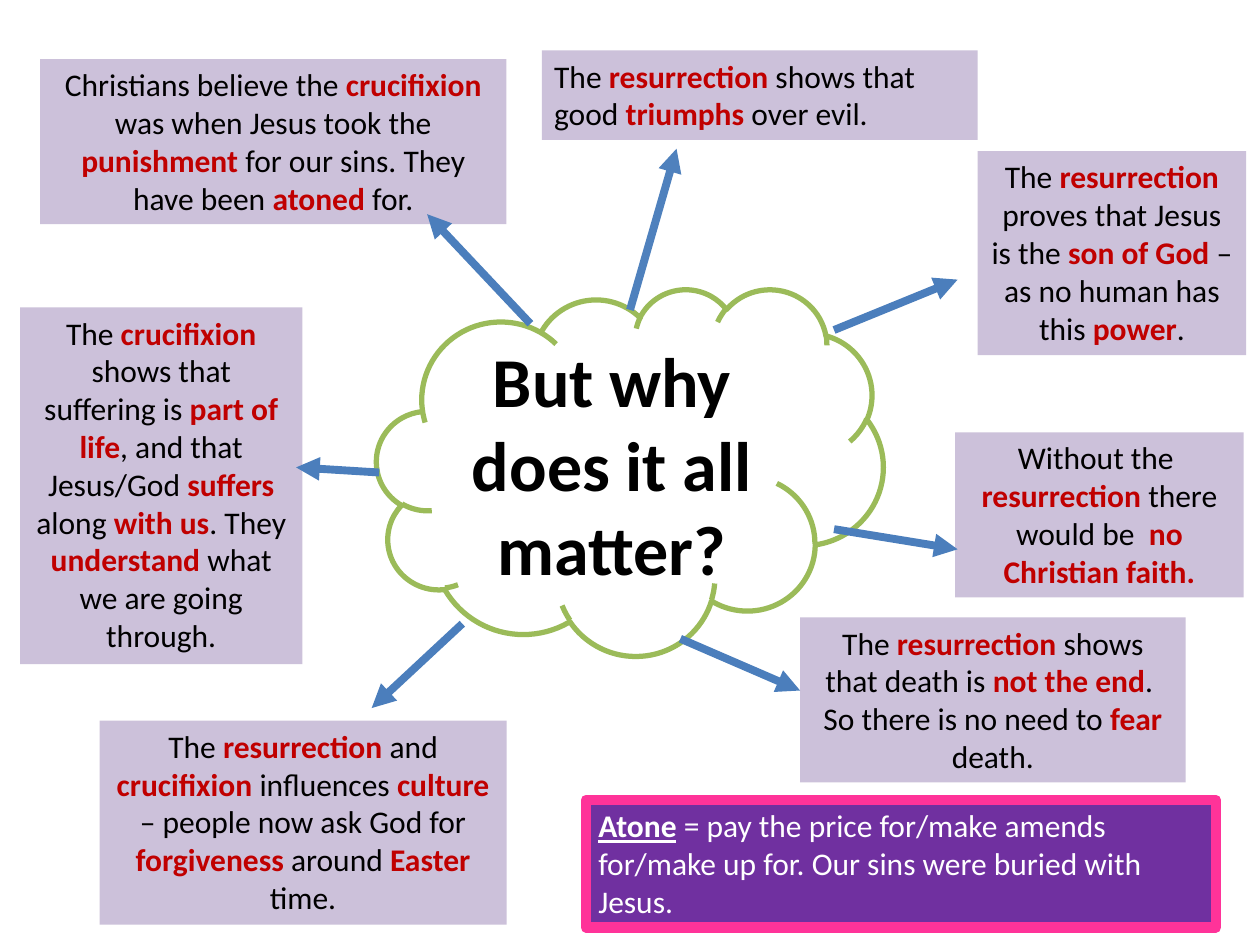
from lxml import etree
from pptx import Presentation
from pptx.dml.color import RGBColor
from pptx.enum import shapes, text
from pptx.oxml import ns
from pptx.util import Pt

COLORS = {
    "lilac": "CCC1DA", "key": "C00000", "black": "000000", "white": "FFFFFF",
    "cloud": "9BBB59", "arrow": "4B7EBC", "up_arrow": "4F81BD",
    "purple": "7030A0", "pink": "FF3399",
}
CENTER, LEFT = text.PP_ALIGN.CENTER, text.PP_ALIGN.LEFT


def rgb(name):
    return RGBColor.from_string(COLORS[name])


def add_run(paragraph, words, size, color, bold=False):
    run = paragraph.add_run()
    run.text = words
    run.font.name = "Calibri"
    run.font.size = Pt(size)
    run.font.bold = bold
    run.font.color.rgb = rgb(color)
    return run


prs = Presentation()
prs.slide_width, prs.slide_height = Pt(720), Pt(540)
slide = prs.slides.add_slide(prs.slide_layouts[6])

# Central question
cloud = slide.shapes.add_shape(
    shapes.MSO_SHAPE.CLOUD, Pt(215.3), Pt(164.9), Pt(289.4), Pt(209.5))
cloud.shadow.inherit = False
cloud.fill.solid()
cloud.fill.fore_color.rgb = rgb("white")
cloud.line.color.rgb = rgb("cloud")
cloud.line.width = Pt(3)
cloud.text_frame.word_wrap = True
cloud.text_frame.vertical_anchor = text.MSO_ANCHOR.MIDDLE
question = cloud.text_frame.paragraphs[0]
question.alignment = CENTER
add_run(question, "But why does it all matter?", 40, "black", bold=True)

# Reasons: left, top, width, height, alignment, words with *key terms* starred
reasons = [
    (23, 33.8, 266.4, 94.3, CENTER,
     "Christians believe the *crucifixion* was when Jesus took the *punishment*"
     " for our sins. They have been *atoned* for."),
    (11.5, 175.7, 161.3, 203.8, CENTER,
     "The *crucifixion* shows that suffering is *part of life*, and that Jesus/God"
     " *suffers* along *with us*. They *understand* what we are going through."),
    (457.2, 352.8, 220.3, 94.3, CENTER,
     "The *resurrection* shows that death is *not the end*.  So there is no need"
     " to *fear* death."),
    (309.6, 28.8, 249.1, 51.1, LEFT,
     "The *resurrection* shows that good *triumphs* over evil."),
    (558.7, 86.4, 153.4, 116.6, CENTER,
     "The *resurrection* proves that Jesus is the *son of God *– as no human has"
     " this *power*."),
    (56.9, 411.8, 232.6, 116.6, CENTER,
     "The *resurrection* and *crucifixion* influences *culture* – people now ask"
     " God for *forgiveness* around *Easter* time."),
    (545.8, 247, 164.9, 94.3, CENTER,
     "Without the  *resurrection* there would be  *no Christian faith.*"),
]
for left, top, width, height, alignment, words in reasons:
    reason = slide.shapes.add_textbox(Pt(left), Pt(top), Pt(width), Pt(height))
    reason.fill.solid()
    reason.fill.fore_color.rgb = rgb("lilac")
    reason.text_frame.word_wrap = True
    reason.text_frame.auto_size = text.MSO_AUTO_SIZE.SHAPE_TO_FIT_TEXT
    sentence = reason.text_frame.paragraphs[0]
    sentence.alignment = alignment
    for i, part in enumerate(words.split("*")):
        is_key = i % 2 == 1
        if part:
            add_run(sentence, part, 18, "key" if is_key else "black", is_key)

# Arrows from the cloud to the reasons
arrows = [
    (303.1, 185, 244.1, 122.4, "arrow"),
    (360, 177.1, 386.6, 85, "up_arrow"),
    (388.8, 365, 457.2, 394.6, "arrow"),
    (476.6, 188.6, 547.2, 159.8, "arrow"),
    (264.2, 356.4, 212.4, 404.6, "arrow"),
    (216.7, 270, 169.2, 267.1, "arrow"),
    (476.6, 302.4, 547.2, 313.9, "arrow"),
]
for x1, y1, x2, y2, color in arrows:
    arrow = slide.shapes.add_connector(
        shapes.MSO_CONNECTOR.STRAIGHT, Pt(x1), Pt(y1), Pt(x2), Pt(y2))
    arrow.line.color.rgb = rgb(color)
    arrow.line.width = Pt(4.5)
    etree.SubElement(arrow.line._get_or_add_ln(), ns.qn("a:tailEnd"), type="triangle")
    etree.SubElement(arrow._element.spPr, ns.qn("a:effectLst"))

# Definition
definition = slide.shapes.add_textbox(Pt(334.8), Pt(457.2), Pt(360), Pt(72.7))
definition.fill.solid()
definition.fill.fore_color.rgb = rgb("purple")
definition.line.color.rgb = rgb("pink")
definition.line.width = Pt(6)
definition.text_frame.word_wrap = True
definition.text_frame.auto_size = text.MSO_AUTO_SIZE.SHAPE_TO_FIT_TEXT
meaning = definition.text_frame.paragraphs[0]
add_run(meaning, "Atone", 18, "white", bold=True).font.underline = True
add_run(meaning, " = pay the price for/make amends for/make up for."
        " Our sins were buried with Jesus.", 18, "white")

prs.save("out.pptx")
